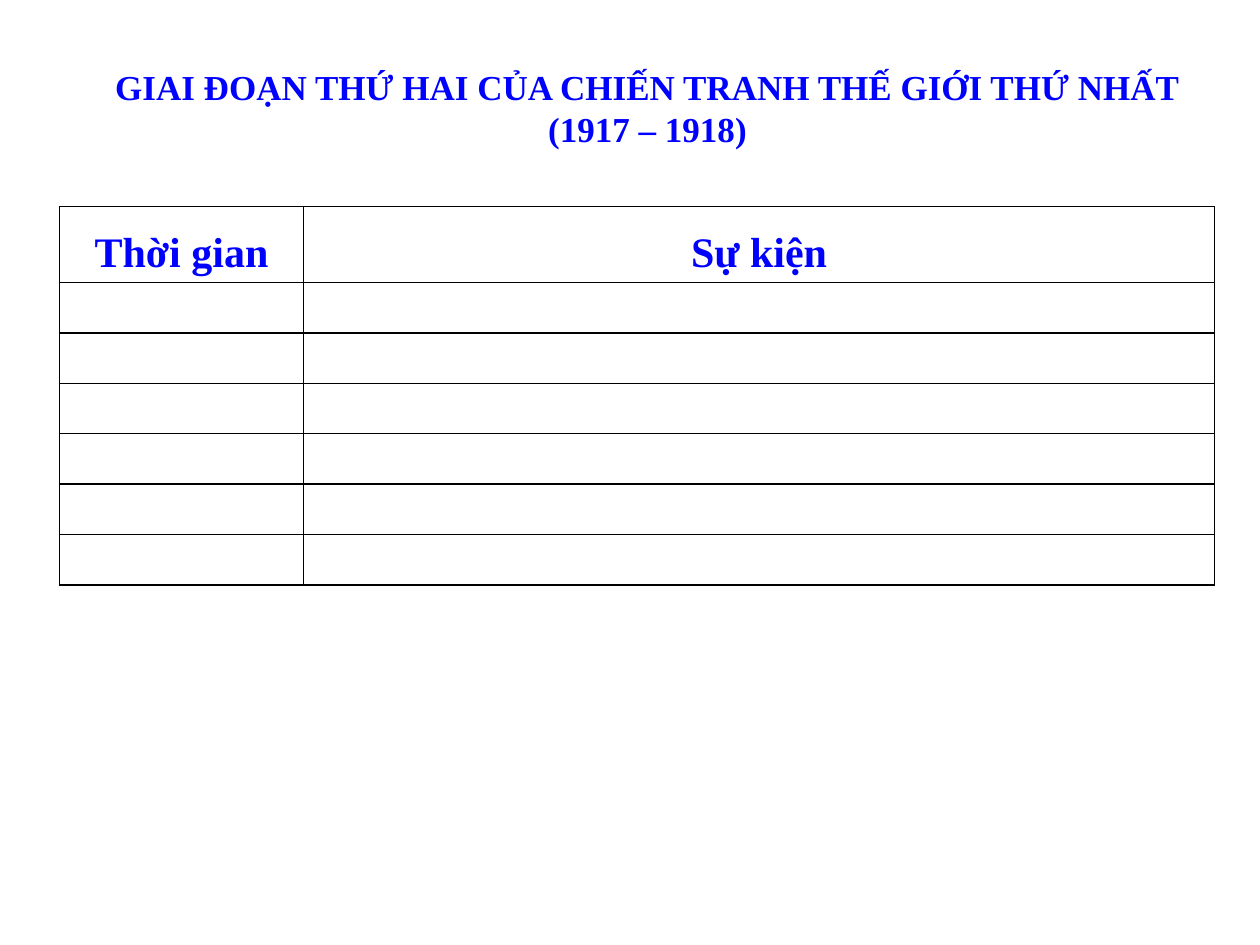
from lxml.etree import SubElement
from pptx import Presentation
from pptx.dml.color import RGBColor
from pptx.enum.text import MSO_AUTO_SIZE as AutoSize, PP_ALIGN as Align
from pptx.oxml.ns import qn
from pptx.util import Pt

FONT = "Times New Roman"
BLUE = "0000FF"
BLACK = "000000"
TITLE_LINES = ["GIAI ĐOẠN THỨ HAI CỦA CHIẾN TRANH THẾ GIỚI THỨ NHẤT", "(1917 – 1918)"]
HEADINGS = ["Thời gian", "Sự kiện"]
COLUMN_WIDTHS = [139.5, 520.5]
HEADER_HEIGHT = 43.4
ROW_HEIGHT = 28.8
EMPTY_ROWS = 6


def color(hex_value):
    return RGBColor.from_string(hex_value)


def format_text(text_frame, size, line_spacing=None):
    for paragraph in text_frame.paragraphs:
        paragraph.alignment = Align.CENTER
        paragraph.line_spacing = line_spacing
        for run in paragraph.runs:
            run.font.name = FONT
            run.font.size = Pt(size)
            run.font.bold = True
            run.font.color.rgb = color(BLUE)


def add_title(slide, left, top, width, height):
    shape = slide.shapes.add_textbox(Pt(left), Pt(top), Pt(width), Pt(height))
    text_frame = shape.text_frame
    text_frame.word_wrap = False
    text_frame.auto_size = AutoSize.SHAPE_TO_FIT_TEXT
    text_frame.text = "\n".join(TITLE_LINES)
    format_text(text_frame, 20)


def set_borders(cell, hex_value, width):
    properties = cell._tc.get_or_add_tcPr()
    # Borders come before the fill in the cell properties
    for position, side in enumerate(("a:lnL", "a:lnR", "a:lnT", "a:lnB")):
        line = SubElement(properties, qn(side), w=str(Pt(width)))
        fill = SubElement(line, qn("a:solidFill"))
        SubElement(fill, qn("a:srgbClr"), val=hex_value)
        properties.insert(position, line)


def format_cell(cell):
    cell.margin_left = cell.margin_right = Pt(5.4)
    cell.margin_top = cell.margin_bottom = Pt(0)
    cell.fill.background()
    set_borders(cell, BLACK, 1)


def add_event_table(slide, left, top):
    heights = [HEADER_HEIGHT] + [ROW_HEIGHT] * EMPTY_ROWS
    frame = slide.shapes.add_table(
        len(heights), len(COLUMN_WIDTHS), Pt(left), Pt(top),
        Pt(sum(COLUMN_WIDTHS)), Pt(sum(heights)))
    table = frame.table
    table.first_row = table.horz_banding = False
    for column, width in zip(table.columns, COLUMN_WIDTHS):
        column.width = Pt(width)
    for row, height in zip(table.rows, heights):
        row.height = Pt(height)
    for cell in table.iter_cells():
        format_cell(cell)

    # Header row
    for cell, heading in zip(table.rows[0].cells, HEADINGS):
        cell.text_frame.text = heading
        format_text(cell.text_frame, 24, line_spacing=1.5)


def main():
    presentation = Presentation()
    presentation.slide_width = Pt(720)
    presentation.slide_height = Pt(540)
    slide = presentation.slides.add_slide(presentation.slide_layouts[6])

    add_title(slide, 56, 34, 628, 55.4)
    add_event_table(slide, 34, 118)

    presentation.save("out.pptx")


if __name__ == "__main__":
    main()
